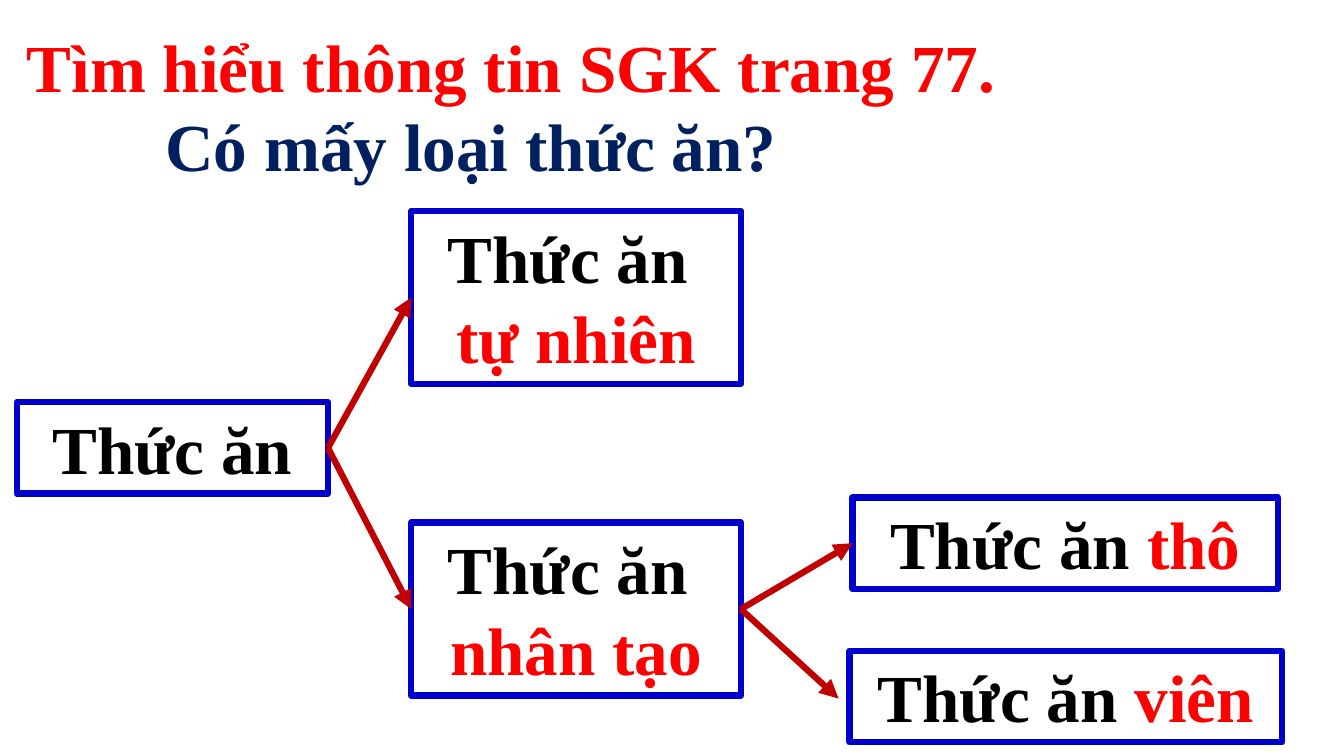
from dataclasses import dataclass

from lxml import etree
from pptx import Presentation
from pptx import util as u
from pptx.dml.color import RGBColor
from pptx.enum import shapes, text
from pptx.oxml.ns import qn

COLORS = {
    "red": "FF0000",
    "navy": "002060",
    "black": "000000",
    "border": "0000CC",
    "arrow": "C00000",
}
FONT, SIZE, LINE = "Times New Roman", 48, 4.5
ROW_H, TALL_H = 65.4, 123.6
TOP, LEFT, BOTTOM, RIGHT = range(4)

Run = tuple[str, str]
Para = list[Run]


@dataclass(frozen=True)
class Box:
    name: str
    x: float
    y: float
    w: float
    h: float
    paras: list[Para]


@dataclass(frozen=True)
class Arrow:
    start: str
    end: str
    tip: tuple[float, float] | None = None  # free end, short of the box


FOOD: Run = ("Thức ăn", "black")
FOOD_: Run = ("Thức ăn ", "black")

BOXES = [
    Box("food", 12, 287.2, 222.3, ROW_H, [[FOOD]]),
    Box("natural", 293.8, 150.7, 235.4, TALL_H, [[FOOD_], [("tự nhiên", "red")]]),
    Box("artificial", 293.8, 373.3, 235.4, TALL_H, [[FOOD_], [("nhân tạo", "red")]]),
    Box("raw", 609, 355.3, 304, ROW_H, [[FOOD_, ("thô", "red")]]),
    Box("pellet", 606.9, 464.8, 308.9, ROW_H, [[FOOD_, ("viên", "red")]]),
]
ARROWS = [
    Arrow("food", "natural"),
    Arrow("food", "artificial"),
    Arrow("artificial", "raw"),
    Arrow("artificial", "pellet", (599, 499)),
]


def rgb(name: str) -> RGBColor:
    return RGBColor.from_string(COLORS[name])


def write(tf, paras: list[Para], align) -> None:
    tf.word_wrap = True
    tf.auto_size = text.MSO_AUTO_SIZE.NONE
    tf.vertical_anchor = text.MSO_ANCHOR.TOP
    for i, runs in enumerate(paras):
        p = tf.add_paragraph() if i else tf.paragraphs[0]
        p.alignment = align
        p.font.name, p.font.size, p.font.bold = FONT, u.Pt(SIZE), True
        for words, color in runs:
            r = p.add_run()
            r.text = words
            r.font.color.rgb = rgb(color)


def add_box(s, box: Box):
    sp = s.shapes.add_shape(
        shapes.MSO_SHAPE.RECTANGLE,
        u.Pt(box.x), u.Pt(box.y), u.Pt(box.w), u.Pt(box.h),
    )
    sp.shadow.inherit = False
    sp.fill.background()
    sp.line.color.rgb = rgb("border")
    sp.line.width = u.Pt(LINE)
    write(sp.text_frame, box.paras, text.PP_ALIGN.CENTER)
    return sp


def add_arrow(s, arrow: Arrow, nodes: dict) -> None:
    x, y = arrow.tip or (0, 0)
    cxn = s.shapes.add_connector(
        shapes.MSO_CONNECTOR.STRAIGHT, 0, 0, u.Pt(x), u.Pt(y)
    )
    cxn.begin_connect(nodes[arrow.start], RIGHT)
    if arrow.tip is None:
        cxn.end_connect(nodes[arrow.end], LEFT)
    cxn.line.color.rgb = rgb("arrow")
    cxn.line.width = u.Pt(LINE)
    etree.SubElement(cxn.line._get_or_add_ln(), qn("a:tailEnd"), type="triangle")
    etree.SubElement(cxn._element.spPr, qn("a:effectLst"))


def main() -> None:
    prs = Presentation()
    prs.slide_width, prs.slide_height = u.Pt(960), u.Pt(540)
    s = prs.slides.add_slide(prs.slide_layouts.get_by_name("Title Only"))

    # Title
    title = s.shapes.title
    title.left, title.top = u.Pt(12), u.Pt(14.4)
    title.width, title.height = u.Pt(739.4), u.Pt(ROW_H)
    write(title.text_frame, [[("Tìm hiểu thông tin SGK trang 77.", "red")]],
          text.PP_ALIGN.JUSTIFY)

    # Tree of food types
    nodes = {box.name: add_box(s, box) for box in BOXES}
    for arrow in ARROWS:
        add_arrow(s, arrow, nodes)

    # Question under the title
    question = s.shapes.add_textbox(u.Pt(111), u.Pt(70.9), u.Pt(487.4), u.Pt(ROW_H))
    write(question.text_frame, [[("Có mấy loại thức ăn?", "navy")]],
          text.PP_ALIGN.JUSTIFY)

    prs.save("out.pptx")


if __name__ == "__main__":
    main()
